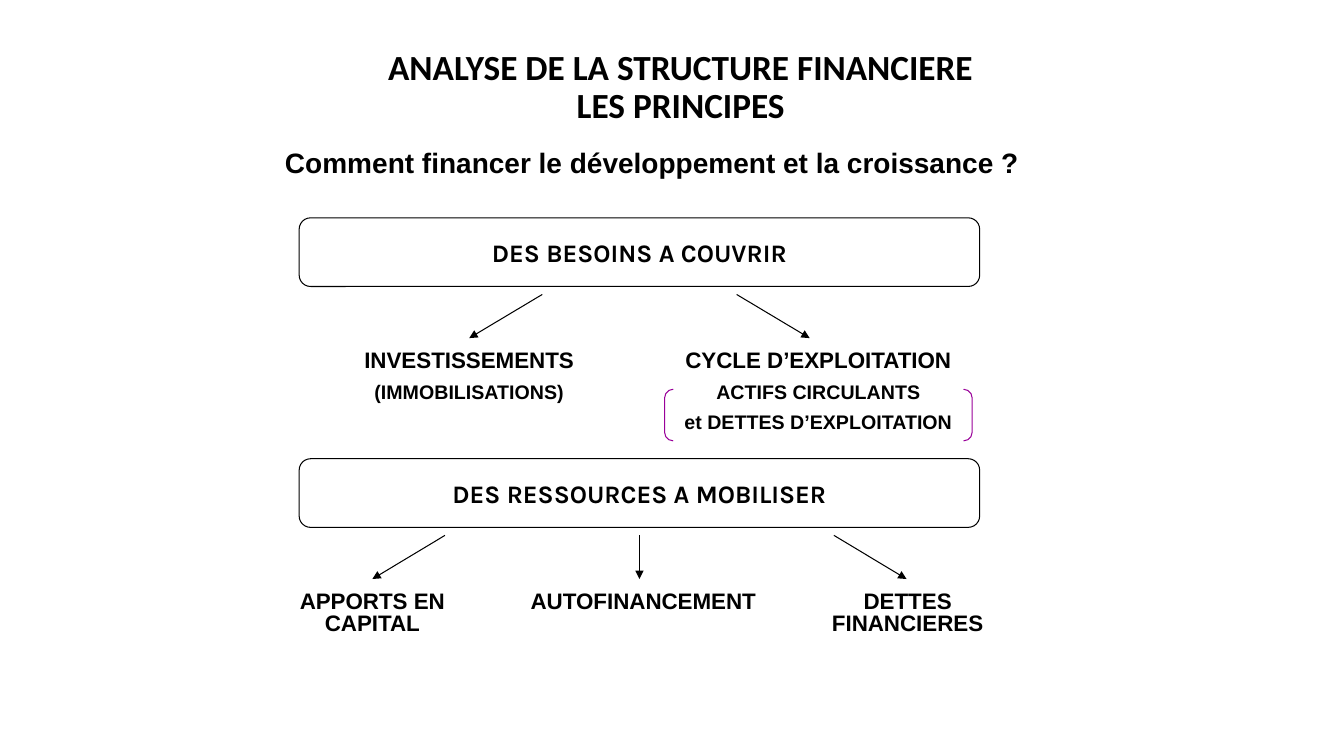
from dataclasses import dataclass

from lxml.etree import SubElement
from pptx import Presentation
from pptx.dml.color import RGBColor
from pptx.enum.shapes import MSO_CONNECTOR, MSO_SHAPE
from pptx.enum.text import MSO_ANCHOR, MSO_AUTO_SIZE, PP_ALIGN
from pptx.oxml.ns import qn
from pptx.util import Cm, Pt


@dataclass(frozen=True)
class Theme:
    black: RGBColor = RGBColor(0x00, 0x00, 0x00)
    white: RGBColor = RGBColor(0xFF, 0xFF, 0xFF)
    purple: RGBColor = RGBColor(0x99, 0x00, 0x99)
    title_font: str = "Calibri"
    body_font: str = "Arial"
    banner_font: str = "Karla"
    title_size: float = 25.2
    question_size: float = 20
    banner_size: float = 18
    label_size: float = 16
    detail_size: float = 14
    line_width: float = 0.75
    label_spacing: float = 0.8
    detail_gap: float = 8


@dataclass(frozen=True)
class Branch:
    """One arrow and its label; offsets are in cm from the banner's centre."""
    arrow_start: float
    arrow_end: float
    label_centre: float
    label_width: float
    label_height: float
    lines: tuple
    bracketed: bool = False


THEME = Theme()

NEEDS = (
    Branch(-2.45, -4.29, -4.29, 6.93, 1.57, ("INVESTISSEMENTS", "(IMMOBILISATIONS)")),
    Branch(2.45, 4.29, 4.51, 9.8, 2.36,
           ("CYCLE D’EXPLOITATION", "ACTIFS CIRCULANTS", "et DETTES D’EXPLOITATION"),
           bracketed=True),
)
RESOURCES = (
    Branch(-4.9, -6.73, -6.73, 4.9, 1.35, ("APPORTS EN CAPITAL",)),
    Branch(0, 0, 0.1, 7.34, 0.81, ("AUTOFINANCEMENT",)),
    Branch(4.9, 6.73, 6.76, 4.5, 1.35, ("DETTES FINANCIERES",)),
)


def format_paragraph(paragraph, font_name, size):
    paragraph.alignment = PP_ALIGN.CENTER
    for run in paragraph.runs:
        run.font.name = font_name
        run.font.size = Pt(size)
        run.font.bold = True
        run.font.color.rgb = THEME.black


def outline(shape, color):
    shape.shadow.inherit = False
    shape.line.color.rgb = color
    shape.line.width = Pt(THEME.line_width)


def add_text(slide, left, top, width, height):
    frame = slide.shapes.add_textbox(Cm(left), Cm(top), Cm(width), Cm(height)).text_frame
    frame.word_wrap = True
    frame.auto_size = MSO_AUTO_SIZE.SHAPE_TO_FIT_TEXT
    return frame


def add_title(slide, left, top, width, height):
    title = slide.shapes.title
    title.left, title.top, title.width, title.height = map(Cm, (left, top, width, height))
    frame = title.text_frame
    frame.text = "ANALYSE DE LA STRUCTURE FINANCIERE\vLES PRINCIPES"
    frame.vertical_anchor = MSO_ANCHOR.MIDDLE
    frame.auto_size = MSO_AUTO_SIZE.NONE
    heading = frame.paragraphs[0]
    heading.line_spacing = 0.9
    format_paragraph(heading, THEME.title_font, THEME.title_size)


def add_question(slide, left, top, width, height):
    frame = add_text(slide, left, top, width, height)
    frame.text = "Comment financer le développement et la croissance ?"
    format_paragraph(frame.paragraphs[0], THEME.body_font, THEME.question_size)


def add_banner(slide, left, top, width, height, wording):
    banner = slide.shapes.add_shape(
        MSO_SHAPE.ROUNDED_RECTANGLE, Cm(left), Cm(top), Cm(width), Cm(height))
    outline(banner, THEME.black)
    banner.fill.solid()
    banner.fill.fore_color.rgb = THEME.white
    frame = banner.text_frame
    frame.text = wording
    frame.word_wrap = False
    frame.vertical_anchor = MSO_ANCHOR.MIDDLE
    format_paragraph(frame.paragraphs[0], THEME.banner_font, THEME.banner_size)


def add_arrow(slide, start_x, start_y, end_x, end_y):
    arrow = slide.shapes.add_connector(
        MSO_CONNECTOR.STRAIGHT, Cm(start_x), Cm(start_y), Cm(end_x), Cm(end_y))
    arrow.line.color.rgb = THEME.black
    arrow.line.width = Pt(THEME.line_width)
    SubElement(arrow.line._get_or_add_ln(), qn("a:tailEnd"), type="triangle")
    SubElement(arrow._element.spPr, qn("a:effectLst"))


def add_label(slide, left, top, width, height, lines):
    frame = add_text(slide, left, top, width, height)
    frame.text = "\n".join(lines)
    for index, paragraph in enumerate(frame.paragraphs):
        paragraph.line_spacing = THEME.label_spacing
        if index:
            paragraph.space_before = Pt(THEME.detail_gap)
        format_paragraph(paragraph, THEME.body_font,
                         THEME.detail_size if index else THEME.label_size)


def add_brackets(slide, left, top, width, height):
    brackets = slide.shapes.add_shape(
        MSO_SHAPE.DOUBLE_BRACKET, Cm(left), Cm(top), Cm(width), Cm(height))
    outline(brackets, THEME.purple)
    brackets.fill.background()


def add_section(slide, left, top, width, banner_height, wording, branches):
    """A banner with arrows leading down to its labels."""
    add_banner(slide, left, top, width, banner_height, wording)
    centre = left + width / 2
    arrow_top = top + banner_height + 0.2
    arrow_bottom = arrow_top + 1.1
    label_top = arrow_bottom + 0.22
    for branch in branches:
        add_arrow(slide, centre + branch.arrow_start, arrow_top,
                  centre + branch.arrow_end, arrow_bottom)
        label_centre = centre + branch.label_centre
        add_label(slide, label_centre - branch.label_width / 2, label_top,
                  branch.label_width, branch.label_height, branch.lines)
        if branch.bracketed:
            bracket_width = 7.75
            add_brackets(slide, label_centre - bracket_width / 2, label_top + 1.07,
                         bracket_width, 1.3)


def main():
    deck = Presentation()
    deck.slide_width, deck.slide_height = Cm(33.87), Cm(19.05)
    slide = deck.slides.add_slide(deck.slide_layouts.get_by_name("Title Only"))

    # Heading
    add_title(slide, 5.94, 1.32, 22.43, 1.8)
    add_question(slide, 6.53, 3.53, 19.81, 1.12)

    # Needs, then the resources that cover them
    add_section(slide, 7.54, 5.49, 17.15, 1.73, "DES BESOINS A COUVRIR", NEEDS)
    add_section(slide, 7.54, 11.56, 17.15, 1.73, "DES RESSOURCES A MOBILISER", RESOURCES)

    deck.save("out.pptx")


if __name__ == "__main__":
    main()
